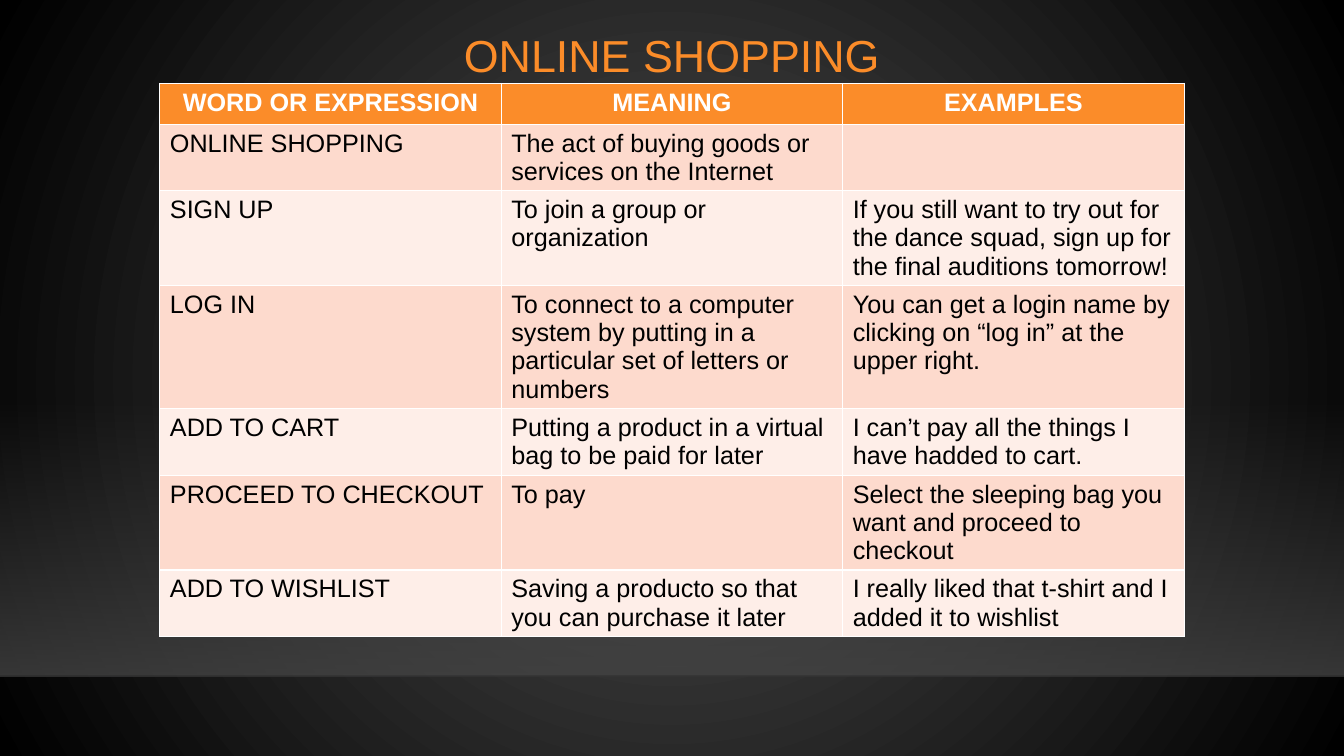
from dataclasses import dataclass

from lxml import etree
from pptx import Presentation
from pptx.dml.color import RGBColor
from pptx.enum import shapes, text
from pptx.oxml.ns import qn
from pptx.util import Pt


@dataclass(frozen=True)
class Theme:
    font: str = "Arial"
    title_size: int = 32
    table_size: int = 18
    accent: str = "FB8C29"
    header_text: str = "FFFFFF"
    body_text: str = "000000"
    bands: tuple = ("FDDACD", "FEEEE8")
    glow: str = "505050"
    edge: str = "000000"
    floor: str = "454545"
    horizon: str = "000001"


THEME = Theme()
WIDTH, HEIGHT = 960, 540
ROW_HEIGHT = 29.2

VOCABULARY = [
    ("WORD OR EXPRESSION", "MEANING", "EXAMPLES"),
    ("ONLINE SHOPPING", "The act of buying goods or services on the Internet", ""),
    ("SIGN UP", "To join a group or organization",
     "If you still want to try out for the dance squad, sign up for the final auditions tomorrow!"),
    ("LOG IN",
     "To connect to a computer system by putting in a particular set of letters or numbers",
     "You can get a login name by clicking on “log in” at the upper right."),
    ("ADD TO CART", "Putting a product in a virtual bag to be paid for later",
     "I can’t pay all the things I have hadded to cart."),
    ("PROCEED TO CHECKOUT", "To pay",
     "Select the sleeping bag you want and proceed to checkout"),
    ("ADD TO WISHLIST", "Saving a producto so that you can purchase it later",
     "I really liked that t-shirt and I added it to wishlist"),
]


def rgb(value):
    return RGBColor.from_string(value)


def set_alpha(color, percent):
    etree.SubElement(color, qn("a:alpha"), val=str(percent * 1000))


def set_gradient(fill, *colors):
    fill.gradient()
    for stop, color in zip(fill.gradient_stops, colors):
        stop.color.rgb = rgb(color)


def style_text(p, size, color, bold=False):
    p.font.name = THEME.font
    p.font.size = Pt(size)
    p.font.bold = bold
    p.font.color.rgb = rgb(color)


def add_backdrop(s):
    # Radial glow from the centre of the slide
    set_gradient(s.background.fill, THEME.glow, THEME.edge)
    grad = s.background._cSld.find(".//" + qn("a:gradFill"))
    lin = grad.find(qn("a:lin"))
    radial = etree.Element(qn("a:path"), path="circle")
    etree.SubElement(radial, qn("a:fillToRect"), l="50000", t="50000", r="50000", b="50000")
    grad.replace(lin, radial)


def add_floor(s, x, y, w, h):
    # Band that fades in downwards
    sp = s.shapes.add_shape(shapes.MSO_SHAPE.RECTANGLE, Pt(x), Pt(y), Pt(w), Pt(h))
    sp.shadow.inherit = False
    sp.line.fill.background()
    set_gradient(sp.fill, THEME.floor, THEME.floor)
    sp.fill.gradient_angle = 270
    colors = sp._element.spPr.iter(qn("a:srgbClr"))
    for color, percent in zip(list(colors), (0, 80)):
        set_alpha(color, percent)

    # Horizon along its lower edge
    line = s.shapes.add_connector(shapes.MSO_CONNECTOR.STRAIGHT,
                                  Pt(x), Pt(y + h), Pt(x + w), Pt(y + h))
    line.line.width = Pt(1)
    line.line.color.rgb = rgb(THEME.horizon)
    spPr = line._element.spPr
    set_alpha(spPr.find(".//" + qn("a:srgbClr")), 20)
    etree.SubElement(spPr, qn("a:effectLst"))


def add_title(s, x, y, w, h):
    sp = s.shapes.title
    sp.left, sp.top, sp.width, sp.height = Pt(x), Pt(y), Pt(w), Pt(h)
    tf = sp.text_frame
    tf.text = "ONLINE SHOPPING"
    tf.auto_size = text.MSO_AUTO_SIZE.NONE
    tf.vertical_anchor = text.MSO_ANCHOR.MIDDLE
    p = tf.paragraphs[0]
    p.alignment = text.PP_ALIGN.CENTER
    p.line_spacing = 0.9
    style_text(p, THEME.title_size, THEME.accent)


def add_vocabulary(s, x, y, w):
    # The table style supplies the white grid; rows grow with their text
    rows, cols = len(VOCABULARY), len(VOCABULARY[0])
    table = s.shapes.add_table(rows, cols, Pt(x), Pt(y), Pt(w), Pt(rows * ROW_HEIGHT)).table
    for i, entry in enumerate(VOCABULARY):
        header = i == 0
        fill = THEME.accent if header else THEME.bands[(i - 1) % 2]
        color = THEME.header_text if header else THEME.body_text
        for j, words in enumerate(entry):
            cell = table.cell(i, j)
            cell.fill.solid()
            cell.fill.fore_color.rgb = rgb(fill)
            cell.text = words
            p = cell.text_frame.paragraphs[0]
            p.alignment = text.PP_ALIGN.CENTER if header else text.PP_ALIGN.LEFT
            style_text(p, THEME.table_size, color, bold=header)


def add_vocabulary_slide(prs):
    s = prs.slides.add_slide(prs.slide_layouts[5])
    margin = 114.2
    content_width = WIDTH - 2 * margin
    add_backdrop(s)
    add_floor(s, 0, 285, WIDTH, 198)
    add_title(s, margin, 0, content_width, 82.8)
    add_vocabulary(s, margin, 59.6, content_width)


def main():
    prs = Presentation()
    prs.slide_width, prs.slide_height = Pt(WIDTH), Pt(HEIGHT)
    add_vocabulary_slide(prs)
    prs.save("out.pptx")


if __name__ == "__main__":
    main()
